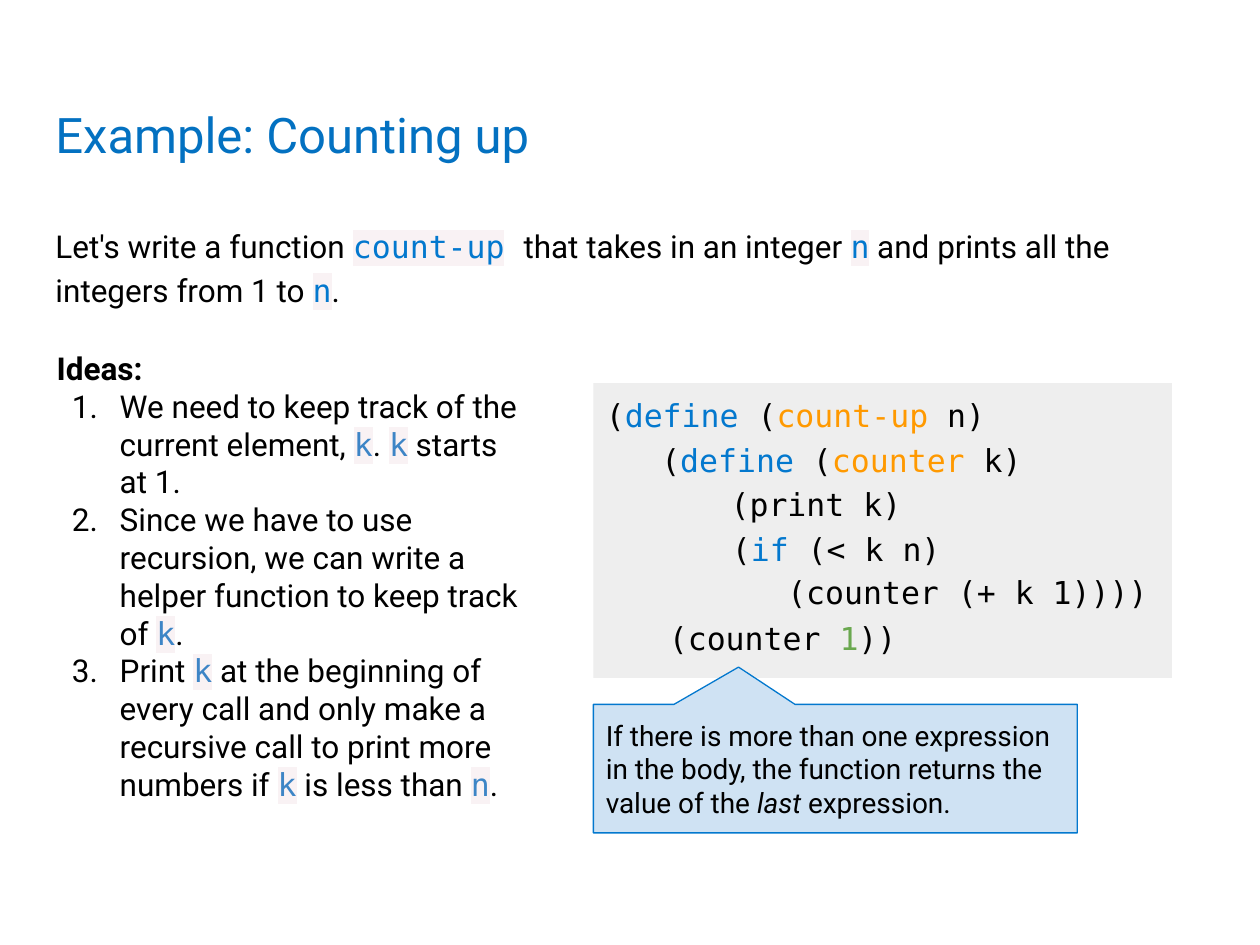
import lxml.etree
import pptx
import pptx.dml.color
import pptx.enum.shapes
import pptx.enum.text
import pptx.oxml.ns
import pptx.util

Inches, Pt = pptx.util.Inches, pptx.util.Pt
ANCHOR = pptx.enum.text.MSO_ANCHOR
SHAPE = pptx.enum.shapes.MSO_SHAPE
qn = pptx.oxml.ns.qn

BLACK, BLUE, LINK, ORANGE, GREEN = "000000", "0378CE", "3D85C6", "FF9900", "6AA84F"
HIGHLIGHT = "F9F2F4"
SANS = {"name": "Roboto", "size": Pt(18)}
MONO = {"name": "DejaVu Sans Mono", "size": Pt(18)}
NOTE = {"name": "Roboto", "size": Pt(16)}

INTRO = [("Let's write a function ", SANS), ("count-up", MONO, BLUE, HIGHLIGHT),
         (" ", MONO), ("that takes in an integer ", SANS),
         ("n", MONO, BLUE, HIGHLIGHT),
         (" and prints all the integers from 1 to ", SANS),
         ("n", MONO, BLUE, HIGHLIGHT), (".", SANS)]
K = ("k", MONO, LINK, HIGHLIGHT)
N = ("n", MONO, LINK, HIGHLIGHT)
IDEAS = [
    [("We need to keep track of the current element, ", SANS), K, (". ", SANS), K,
     (" starts at 1.", SANS)],
    [("Since we have to use recursion, we can write a helper function to keep track of ", SANS),
     K, (".", SANS)],
    [("Print ", SANS), K,
     (" at the beginning of every call and only make a recursive call "
      "to print more numbers if ", SANS), K, (" is less than ", SANS), N, (".", SANS)],
]
CODE = [
    ((5.15, 3.4, 3.2, 0.48), [("(", BLACK), ("define", BLUE), (" (", BLACK),
                              ("counter", ORANGE), (" k)", BLACK)]),
    ((6.15, 4.45, 3.2, 0.48), [("(counter (+ k 1))))", BLACK)]),
    ((5.7, 3.75, 1.58, 0.48), [("(print k)", BLACK)]),
    ((5.71, 4.11, 2.55, 0.48), [("(", BLACK), ("if", BLUE), (" (< k n)", BLACK)]),
    ((5.21, 4.81, 2.55, 0.48), [("(counter ", BLACK), ("1", GREEN), ("))", BLACK)]),
]
HEADER = [("(", BLACK), ("define", BLUE), (" (", BLACK), ("count-up", ORANGE), (" n)", BLACK)]


def rgb(value):
    """Return a colour from a hex string."""
    return pptx.dml.color.RGBColor.from_string(value)


def apply(target, values):
    """Set each attribute of the target from a dict."""
    for key, value in values.items():
        setattr(target, key, value)


def add_run(p, text, font, color=BLACK, highlight=None):
    """Add a formatted run, with a highlight if one is given."""
    r = p.add_run()
    r.text = text
    apply(r.font, font)
    r.font.color.rgb = rgb(color)
    if highlight:
        mark = lxml.etree.Element(qn("a:highlight"))
        lxml.etree.SubElement(mark, qn("a:srgbClr"), val=highlight)
        r.font.fill._xPr.find(qn("a:solidFill")).addnext(mark)


def fill_paragraph(p, runs, spacing=1.0, after=0, numbered=False):
    """Format a paragraph as plain or numbered text and add its runs."""
    apply(p, {"alignment": pptx.enum.text.PP_ALIGN.LEFT, "line_spacing": spacing,
              "space_before": Pt(0), "space_after": Pt(after)})
    pPr = p._p.get_or_add_pPr()
    pPr.set("marL", str(Inches(0.5) if numbered else 0))
    pPr.set("indent", str(Inches(-0.38) if numbered else 0))
    if numbered:
        lxml.etree.SubElement(pPr, qn("a:buFont"), typeface="Roboto")
        lxml.etree.SubElement(pPr, qn("a:buAutoNum"), type="arabicPeriod")
    else:
        lxml.etree.SubElement(pPr, qn("a:buNone"))
    for run in runs:
        add_run(p, *run)


def set_frame(sp, anchor=ANCHOR.TOP):
    """Set wrapping, anchor and insets, and return the text frame."""
    tf = sp.text_frame
    apply(tf, {"word_wrap": True, "auto_size": pptx.enum.text.MSO_AUTO_SIZE.NONE,
               "vertical_anchor": anchor})
    apply(tf, dict.fromkeys(
        ("margin_left", "margin_top", "margin_right", "margin_bottom"), Inches(0.1)))
    return tf


def place(sp, box, anchor=ANCHOR.TOP):
    """Move a placeholder to its box and return its text frame."""
    apply(sp, dict(zip(("left", "top", "width", "height"), map(Inches, box))))
    return set_frame(sp, anchor)


def add_box(s, kind, box, fill, line=None, anchor=ANCHOR.TOP):
    """Add a filled shape without shadow."""
    sp = s.shapes.add_shape(kind, *map(Inches, box))
    sp.shadow.inherit = False
    sp.fill.solid()
    sp.fill.fore_color.rgb = rgb(fill)
    if line:
        sp.line.color.rgb = rgb(line)
        sp.line.width = Pt(0.75)
    else:
        sp.line.fill.background()
    set_frame(sp, anchor)
    return sp


def fill_code(tf, parts):
    """Write one line of coloured code."""
    fill_paragraph(tf.paragraphs[0], [(text, MONO, color) for text, color in parts])


def add_code(s, box, parts):
    """Add a text box with one line of code."""
    fill_code(set_frame(s.shapes.add_textbox(*map(Inches, box))), parts)


def main():
    """Build the slide and save it."""
    prs = pptx.Presentation()
    prs.slide_width, prs.slide_height = Inches(10), Inches(7.5)
    s = prs.slides.add_slide(prs.slide_layouts.get_by_name("Two Content"))
    title, intro, ideas = list(s.placeholders)[:3]

    tf = place(title, (0.34, 0.65, 9.32, 0.83), ANCHOR.MIDDLE)
    fill_paragraph(tf.paragraphs[0],
                   [("Example: Counting up", {**SANS, "size": Pt(28)}, "0371C1")])
    tf = place(intro, (0.34, 1.66, 9.32, 0.7))
    fill_paragraph(tf.paragraphs[0], INTRO, spacing=1.15, after=16)
    tf = place(ideas, (0.35, 2.67, 3.95, 3.68))
    fill_paragraph(tf.paragraphs[0], [("Ideas:", {**SANS, "bold": True})])
    for idea in IDEAS:
        fill_paragraph(tf.add_paragraph(), idea, numbered=True)

    panel = add_box(s, SHAPE.RECTANGLE, (4.71, 3.04, 4.59, 2.34), "EEEEEE")
    fill_code(panel.text_frame, HEADER)
    for box, parts in CODE:
        add_code(s, box, parts)

    callout = add_box(s, SHAPE.ROUNDED_RECTANGULAR_CALLOUT, (4.71, 5.59, 3.84, 1.02),
                      "CFE2F3", BLUE, ANCHOR.MIDDLE)
    for i, value in enumerate((-0.2, -0.79, 0)):
        callout.adjustments[i] = value
    fill_paragraph(callout.text_frame.paragraphs[0], [
        ("If there is more than one expression in the body, "
         "the function returns the value of the ", NOTE),
        ("last", {**NOTE, "italic": True}), (" expression.", NOTE)])
    prs.save("out.pptx")


if __name__ == "__main__":
    main()
